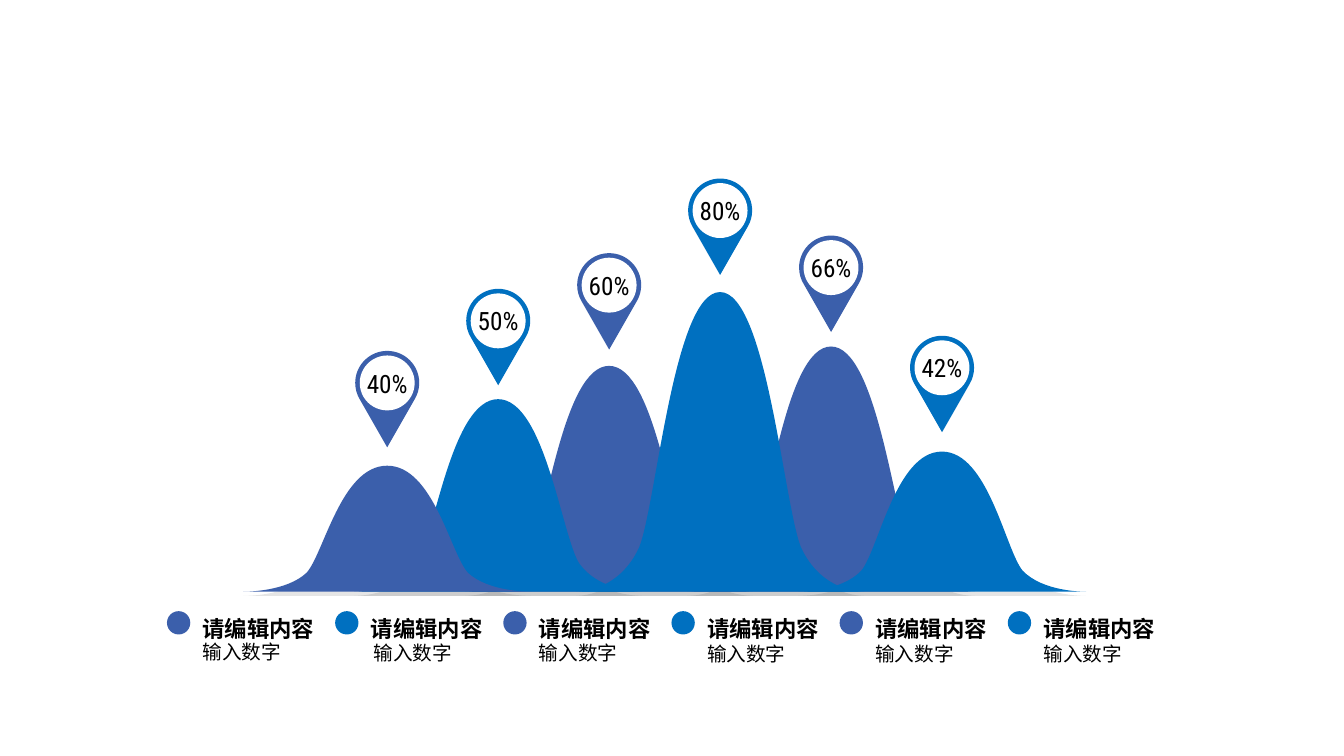
from dataclasses import dataclass

from lxml import etree
from pptx import Presentation
from pptx.dml.color import RGBColor
from pptx.enum.shapes import MSO_SHAPE
from pptx.enum.text import MSO_ANCHOR, MSO_AUTO_SIZE, PP_ALIGN
from pptx.oxml.ns import qn
from pptx.shapes.autoshape import Shape
from pptx.slide import Slide
from pptx.text.text import TextFrame
from pptx.util import Inches, Pt

OVAL = MSO_SHAPE.OVAL
MIDDLE = MSO_ANCHOR.MIDDLE
FIT_SHAPE = MSO_AUTO_SIZE.SHAPE_TO_FIT_TEXT
LEFT, CENTER = PP_ALIGN.LEFT, PP_ALIGN.CENTER

PAGE_COLUMNS, PAGE_ROWS = 160, 90
CELL = Inches(7.5) / PAGE_ROWS

Point = tuple[float, float]


@dataclass(frozen=True)
class Theme:
    accents: tuple[RGBColor, RGBColor] = (RGBColor(0x3B, 0x5F, 0xAB), RGBColor(0x00, 0x70, 0xC0))
    white: RGBColor = RGBColor(0xFF, 0xFF, 0xFF)
    black: RGBColor = RGBColor(0x00, 0x00, 0x00)
    text_font: str = "Noto Sans CJK SC"
    number_font: str = "Roboto Condensed"
    number_size: int = 18
    heading_size: int = 16
    caption_size: int = 14


@dataclass(frozen=True)
class Series:
    share: str
    hill_rows: float
    pin_tip_row: float
    caption_row: float
    caption_shift: float = 0


THEME = Theme()
SERIES = (
    Series("40%", 15, 53.26, 74.42),
    Series("50%", 22.92, 45.87, 74.58, 0.34),
    Series("60%", 26.88, 41.62, 74.58),
    Series("80%", 35.67, 32.74, 74.76),
    Series("66%", 29.19, 39.53, 74.76),
    Series("42%", 16.68, 51.46, 74.76),
)
HILL_ORDER = (2, 4, 5, 1, 0, 3)
HEADING, CAPTION = "请编辑内容", "输入数字"

HILL_CENTER, HILL_PITCH = 46.1, 13.21
HILL_WIDTH, BASE_ROW = 34.3, 70.44
HILL_SIDE = ((-0.5, 0), (-0.49, 0), (-0.35, 0), (-0.28, 0.15),
             (-0.22, 0.3), (-0.16, 1), (0, 1))

PIN_SIDE = ((-3.27, 5.72), (-3.61, 6.28), (-3.81, 6.95), (-3.81, 7.67),
            (-3.81, 9.77), (-2.1, 11.48), (0, 11.48))
PIN_CENTER_RISE, DISC_SIZE = 7.67, 6.54

LEGEND_LEFT, LEGEND_PITCH = 19.88, 20.02
DOT_SIZE, DOT_ROW = 2.78, 72.76
LABEL_SHIFT, LABEL_WIDTH = 3.06, 17.04
HEADING_ROW, HEADING_HEIGHT, CAPTION_HEIGHT = 71.33, 5.28, 4.8


def cells(count: float) -> int:
    return round(count * CELL)


def accent(index: int) -> RGBColor:
    return THEME.accents[index % len(THEME.accents)]


def paint(shape: Shape, color: RGBColor) -> None:
    shape.fill.solid()
    shape.fill.fore_color.rgb = color
    shape.line.fill.background()
    shape.shadow.inherit = False


def write(frame: TextFrame, text: str, *, size: int, font: str, bold: bool = False,
          align: PP_ALIGN = LEFT, spacing: float = 1.0) -> None:
    para = frame.paragraphs[0]
    para.alignment = align
    para.line_spacing = spacing
    span = para.add_run()
    span.text = text
    span.font.size = Pt(size)
    span.font.bold = bold
    span.font.name = font
    span.font.color.rgb = THEME.black
    east_asian = etree.SubElement(span.font._element, qn("a:ea"))
    east_asian.set("typeface", font)


def mirror(side: tuple[Point, ...]) -> list[Point]:
    return list(side) + [(-x, y) for x, y in reversed(side[:-1])]


def add_outline(page: Slide, curve: list[Point], color: RGBColor,
                corners: tuple[Point, ...] = ()) -> Shape:
    knots = [(cells(x), cells(y)) for x, y in curve]
    ends = [(cells(x), cells(y)) for x, y in corners]
    builder = page.shapes.build_freeform(*knots[0])
    builder.add_line_segments(knots[3::3] + ends, close=True)
    shape = builder.convert_to_shape()
    lines = list(shape._element.iter(qn("a:lnTo")))
    for line, start in zip(lines, range(1, len(knots), 3)):
        bend = etree.Element(qn("a:cubicBezTo"))
        for x, y in knots[start:start + 3]:
            etree.SubElement(bend, qn("a:pt"), x=str(x - shape.left), y=str(y - shape.top))
        line.getparent().replace(line, bend)
    paint(shape, color)
    return shape


def add_disc(page: Slide, left: float, top: float, size: float, color: RGBColor) -> Shape:
    disc = page.shapes.add_shape(OVAL, cells(left), cells(top), cells(size), cells(size))
    paint(disc, color)
    return disc


def add_drop_shadow(shape: Shape) -> None:
    effects = shape._element.spPr.find(qn("a:effectLst"))
    shadow = etree.SubElement(effects, qn("a:outerShdw"), blurRad="0", dist=str(Pt(3)),
                              dir="5400000", algn="t", rotWithShape="0")
    color = etree.SubElement(shadow, qn("a:srgbClr"), val=str(THEME.black))
    etree.SubElement(color, qn("a:alpha"), val="10000")


def add_hill(page: Slide, index: int) -> None:
    center = HILL_CENTER + index * HILL_PITCH
    curve = [(center + x * HILL_WIDTH, BASE_ROW - y * SERIES[index].hill_rows)
             for x, y in mirror(HILL_SIDE)]
    add_drop_shadow(add_outline(page, curve, accent(index)))


def add_pin(page: Slide, index: int, series: Series) -> None:
    center = HILL_CENTER + index * HILL_PITCH
    tip = series.pin_tip_row
    curve = [(center + x, tip - y) for x, y in mirror(PIN_SIDE)]
    add_outline(page, curve, accent(index), corners=((center, tip),))
    disc_top = tip - PIN_CENTER_RISE - DISC_SIZE / 2
    disc = add_disc(page, center - DISC_SIZE / 2, disc_top, DISC_SIZE, THEME.white)
    frame = disc.text_frame
    frame.word_wrap = False
    frame.vertical_anchor = MIDDLE
    frame.margin_left = frame.margin_right = frame.margin_top = frame.margin_bottom = 0
    write(frame, series.share, size=THEME.number_size, font=THEME.number_font, align=CENTER)


def add_label(page: Slide, text: str, left: float, top: float, height: float, *,
              size: int, bold: bool = False) -> None:
    box = page.shapes.add_textbox(cells(left), cells(top), cells(LABEL_WIDTH), cells(height))
    box.text_frame.word_wrap = True
    box.text_frame.auto_size = FIT_SHAPE
    write(box.text_frame, text, size=size, font=THEME.text_font, bold=bold, spacing=1.4)


def add_legend_entry(page: Slide, index: int, series: Series) -> None:
    left = LEGEND_LEFT + index * LEGEND_PITCH
    label_left = left + LABEL_SHIFT
    add_disc(page, left, DOT_ROW, DOT_SIZE, accent(index))
    add_label(page, HEADING, label_left, HEADING_ROW, HEADING_HEIGHT,
              size=THEME.heading_size, bold=True)
    add_label(page, CAPTION, label_left + series.caption_shift, series.caption_row,
              CAPTION_HEIGHT, size=THEME.caption_size)


def main() -> None:
    deck = Presentation()
    deck.slide_width, deck.slide_height = cells(PAGE_COLUMNS), cells(PAGE_ROWS)
    page = deck.slides.add_slide(deck.slide_layouts.get_by_name("Blank"))
    for index in HILL_ORDER:
        add_hill(page, index)
    for index, series in enumerate(SERIES):
        add_legend_entry(page, index, series)
    for index, series in enumerate(SERIES):
        add_pin(page, index, series)
    deck.save("out.pptx")


if __name__ == "__main__":
    main()
